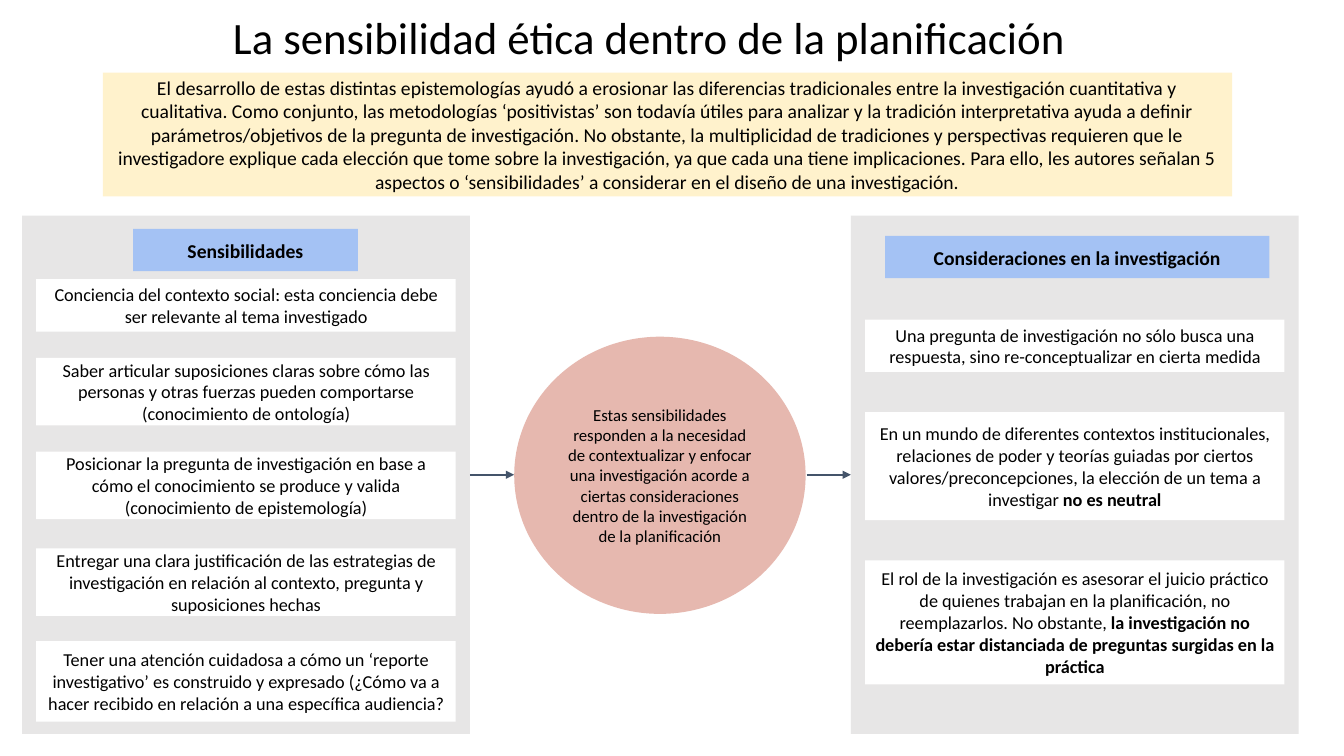
from lxml import etree
from pptx import Presentation
from pptx.dml.color import RGBColor as RGB
from pptx.enum.shapes import MSO_CONNECTOR as LINE, MSO_SHAPE as SHAPE
from pptx.enum.text import MSO_ANCHOR as ANCHOR, PP_ALIGN as ALIGN
from pptx.oxml.ns import qn
from pptx.util import Inches, Pt

COLORS = {
    "text": "000000",
    "intro": "FFF2CC",
    "panel": "E7E6E6",
    "head": "A4C2F4",
    "card": "FFFFFF",
    "circle": "E6B8AF",
    "arrow": "44546A",
}


class Board:
    font = "Calibri"

    def __init__(self, slide):
        self.slide = slide

    def color(self, name):
        return RGB.from_string(COLORS[name])

    def label(self, shape, text, size, bold=False, strong="", anchor=ANCHOR.MIDDLE):
        """Centre the text; `strong` is a bold ending."""
        frame = shape.text_frame
        frame.word_wrap = True
        frame.vertical_anchor = anchor
        frame.margin_left = frame.margin_right = Inches(0.1)
        frame.margin_top = frame.margin_bottom = Inches(0.1)
        para = frame.paragraphs[0]
        para.alignment = ALIGN.CENTER
        para.font.name = self.font
        para.font.size = Pt(size)
        para.font.bold = bold
        para.font.color.rgb = self.color("text")
        para.add_run().text = text
        if strong:
            run = para.add_run()
            run.text = strong
            run.font.bold = True
        return frame

    def title(self, box, text):
        shape = self.slide.shapes.add_textbox(*map(Inches, box))
        frame = self.label(shape, text, 32)
        frame.margin_top = frame.margin_bottom = Inches(0.05)
        frame.margin_right = Inches(0.32)
        frame.paragraphs[0].line_spacing = 0.9

    def shape(self, box, fill, kind=SHAPE.RECTANGLE):
        shape = self.slide.shapes.add_shape(kind, *map(Inches, box))
        shape.shadow.inherit = False
        shape.fill.solid()
        shape.fill.fore_color.rgb = self.color(fill)
        shape.line.fill.background()
        return shape

    def panel(self, left, head, head_box, cards):
        """Grey column with a heading and white cards."""
        self.shape((left, 2.14, 4.44, 5.14), "panel")
        self.label(self.shape(head_box, "head"), head, 14, bold=True, anchor=ANCHOR.TOP)
        for top, height, text, strong in cards:
            card = self.shape((left + 0.14, top, 4.16, height), "card")
            self.label(card, text, 13, strong=strong)

    def arrow(self, start, end, y):
        line = self.slide.shapes.add_connector(
            LINE.STRAIGHT, Inches(start), Inches(y), Inches(end), Inches(y))
        line.line.color.rgb = self.color("arrow")
        line.line.width = Pt(1.5)
        props = line._element.spPr
        etree.SubElement(props.find(qn("a:ln")), qn("a:tailEnd"), type="triangle")
        etree.SubElement(props, qn("a:effectLst"))


INTRO = (
    "El desarrollo de estas distintas epistemologías ayudó a erosionar las diferencias "
    "tradicionales entre la investigación cuantitativa y cualitativa. Como conjunto, las "
    "metodologías ‘positivistas’ son todavía útiles para analizar y la tradición "
    "interpretativa ayuda a definir parámetros/objetivos de la pregunta de investigación. "
    "No obstante, la multiplicidad de tradiciones y perspectivas requieren que le "
    "investigadore explique cada elección que tome sobre la investigación, ya que cada una "
    "tiene implicaciones. Para ello, les autores señalan 5 aspectos o ‘sensibilidades’ a "
    "considerar en el diseño de una investigación."
)

CENTER = (
    "Estas sensibilidades responden a la necesidad de contextualizar y enfocar una "
    "investigación acorde a ciertas consideraciones dentro de la investigación de la "
    "planificación"
)

# Cards: top, height, text, bold ending
SENSES = [
    (2.77, 0.52, "Conciencia del contexto social: esta conciencia debe ser relevante al "
     "tema investigado", ""),
    (3.55, 0.67, "Saber articular suposiciones claras sobre cómo las personas y otras "
     "fuerzas pueden comportarse (conocimiento de ontología)", ""),
    (4.48, 0.67, "Posicionar la pregunta de investigación en base a cómo el conocimiento "
     "se produce y valida (conocimiento de epistemología)", ""),
    (5.44, 0.67, "Entregar una clara justificación de las estrategias de investigación en "
     "relación al contexto, pregunta y suposiciones hechas", ""),
    (6.36, 0.8, "Tener una atención cuidadosa a cómo un ‘reporte investigativo’ es "
     "construido y expresado (¿Cómo va a hacer recibido en relación a una específica "
     "audiencia?", ""),
]

POINTS = [
    (3.17, 0.52, "Una pregunta de investigación no sólo busca una respuesta, sino "
     "re-conceptualizar en cierta medida", ""),
    (4.09, 1.07, "En un mundo de diferentes contextos institucionales, relaciones de poder "
     "y teorías guiadas por ciertos valores/preconcepciones, la elección de un tema a "
     "investigar ", "no es neutral"),
    (5.56, 1.23, "El rol de la investigación es asesorar el juicio práctico de quienes "
     "trabajan en la planificación, no reemplazarlos. No obstante, ",
     "la investigación no debería estar distanciada de preguntas surgidas en la práctica"),
]


def main():
    deck = Presentation()
    deck.slide_width, deck.slide_height = Inches(13.33), Inches(7.5)
    board = Board(deck.slides.add_slide(deck.slide_layouts[6]))

    # Title and introduction
    board.title((1.24, 0, 10.62, 0.8), "La sensibilidad ética dentro de la planificación")
    board.label(board.shape((1.02, 0.72, 11.2, 1.23), "intro"), INTRO, 14)

    # Left panel
    board.panel(0.22, "Sensibilidades", (1.32, 2.27, 2.23, 0.42), SENSES)

    # Circle between two arrows
    board.arrow(4.66, 5.1, 4.71)
    circle = board.shape((5.1, 3.34, 2.89, 2.75), "circle", SHAPE.OVAL)
    board.label(circle, CENTER, 12)
    board.arrow(8, 8.44, 4.71)

    # Right panel
    board.panel(8.44, "Consideraciones en la investigación",
                (8.78, 2.34, 3.81, 0.42), POINTS)

    deck.save("out.pptx")


if __name__ == "__main__":
    main()
